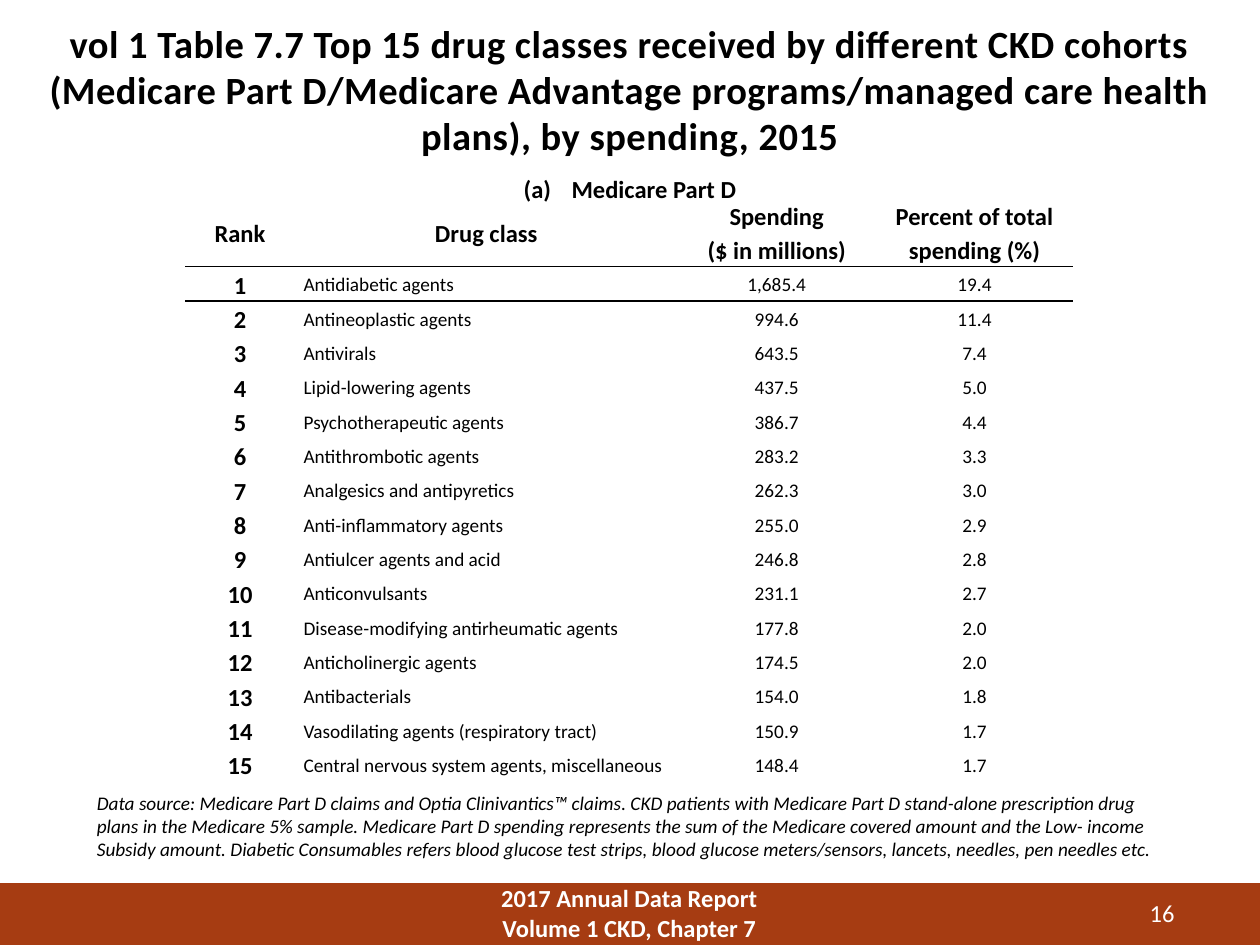
from dataclasses import dataclass

from lxml.etree import SubElement
from pptx import Presentation
from pptx.dml.color import RGBColor
from pptx.enum.shapes import MSO_SHAPE
from pptx.enum.text import MSO_ANCHOR, MSO_AUTO_SIZE, PP_ALIGN
from pptx.oxml import parse_xml
from pptx.oxml.ns import nsdecls, qn
from pptx.util import Inches, Pt

COLUMNS, ROWS = 100, 75  # slide grid, each unit a tenth of an inch
NO_TABLE_STYLE = "{2D5ABB26-0587-4C30-8999-92F81FD0307C}"


@dataclass(frozen=True)
class Theme:
    font: str = "Calibri"
    ink: str = "000000"
    paper: str = "FFFFFF"
    band: str = "A63C12"
    title: int = 22
    label: int = 14
    body: int = 11


class SlideBuilder:
    def __init__(self, deck, theme):
        self.theme = theme
        self.column = deck.slide_width / COLUMNS
        self.row = deck.slide_height / ROWS
        self.page = deck.slides.add_slide(deck.slide_layouts[6])

    def place(self, left, top, width, height):
        return (round(left * self.column), round(top * self.row),
                round(width * self.column), round(height * self.row))

    def style(self, para, size, color, align, bold=False, italic=False):
        para.alignment = align
        for span in para.runs:
            font = span.font
            font.name, font.size = self.theme.font, Pt(size)
            font.bold, font.italic = bold, italic
            font.color.rgb = RGBColor.from_string(color)

    def band(self, area, color):
        shape = self.page.shapes.add_shape(MSO_SHAPE.RECTANGLE, *self.place(*area))
        shape.shadow.inherit = False
        shape.fill.solid()
        shape.fill.fore_color.rgb = RGBColor.from_string(color)
        shape.line.fill.background()

    def text(self, area, words, size, color, align=PP_ALIGN.CENTER,
             wrap=True, grow=False, **emphasis):
        box = self.page.shapes.add_textbox(*self.place(*area))
        frame = box.text_frame
        frame.text = words
        frame.word_wrap = wrap
        frame.auto_size = MSO_AUTO_SIZE.SHAPE_TO_FIT_TEXT if grow else MSO_AUTO_SIZE.NONE
        for para in frame.paragraphs:
            self.style(para, size, color, align, **emphasis)
        return frame

    def letter_bullet(self, para, indent):
        properties = para._p.get_or_add_pPr()
        properties.set("marL", str(Inches(indent)))
        properties.set("indent", str(-Inches(indent)))
        SubElement(properties, qn("a:buFont"), typeface="+mj-lt")
        SubElement(properties, qn("a:buAutoNum"), type="alphaLcParenBoth")

    def rule(self, cell, side):
        line = parse_xml(
            f'<a:{side} {nsdecls("a")} w="{Pt(1)}"><a:solidFill>'
            f'<a:srgbClr val="{self.theme.ink}"/></a:solidFill></a:{side}>')
        cell._tc.get_or_add_tcPr().insert(0, line)

    def table(self, left, top, widths, header_height, row_height, records):
        heights = [header_height] + [row_height] * (len(records) - 1)
        area = self.place(left, top, sum(widths), sum(heights))
        table = self.page.shapes.add_table(len(records), len(widths), *area).table
        table.first_row = table.horz_banding = False
        table._tbl.tblPr.find(qn("a:tableStyleId")).text = NO_TABLE_STYLE
        for column, width in zip(table.columns, widths):
            column.width = round(width * self.column)
        for row, height in zip(table.rows, heights):
            row.height = round(height * self.row)
        for i, record in enumerate(records):
            for j, value in enumerate(record):
                self.cell(table.cell(i, j), value, i, j)

    def cell(self, cell, value, i, j):
        heading = i == 0 or j == 0
        cell.text = value
        cell.fill.background()
        cell.vertical_anchor = MSO_ANCHOR.MIDDLE
        cell.margin_left = cell.margin_right = Inches(0.07)
        cell.margin_top = cell.margin_bottom = 0
        para = cell.text_frame.paragraphs[0]
        para.line_spacing = 1.15
        self.style(para, self.theme.label if heading else self.theme.body, self.theme.ink,
                   PP_ALIGN.LEFT if j == 1 and i else PP_ALIGN.CENTER, bold=heading)
        if i < 2:  # the rule between the header and the first record
            self.rule(cell, "lnT" if i else "lnB")


HEADER = ("Rank", "Drug class", "Spending\v($ in millions)", "Percent of total spending (%)")
DRUG_CLASSES = [
    ("Antidiabetic agents", "1,685.4", "19.4"),
    ("Antineoplastic agents", "994.6", "11.4"),
    ("Antivirals", "643.5", "7.4"),
    ("Lipid-lowering agents", "437.5", "5.0"),
    ("Psychotherapeutic agents", "386.7", "4.4"),
    ("Antithrombotic agents", "283.2", "3.3"),
    ("Analgesics and antipyretics", "262.3", "3.0"),
    ("Anti-inflammatory agents", "255.0", "2.9"),
    ("Antiulcer agents and acid", "246.8", "2.8"),
    ("Anticonvulsants", "231.1", "2.7"),
    ("Disease-modifying antirheumatic agents", "177.8", "2.0"),
    ("Anticholinergic agents", "174.5", "2.0"),
    ("Antibacterials", "154.0", "1.8"),
    ("Vasodilating agents (respiratory tract)", "150.9", "1.7"),
    ("Central nervous system agents, miscellaneous", "148.4", "1.7"),
]
TITLE = ("vol 1 Table 7.7 Top 15 drug classes received by different CKD cohorts "
         "(Medicare Part D/Medicare Advantage programs/managed care health plans), "
         "by spending, 2015")
SOURCE_NOTE = (
    "Data source: Medicare Part D claims and Optia Clinivantics™ claims. CKD patients with "
    "Medicare Part D stand-alone prescription drug plans in the Medicare 5% sample. Medicare "
    "Part D spending represents the sum of the Medicare covered amount and the Low- income "
    "Subsidy amount. Diabetic Consumables refers blood glucose test strips, blood glucose "
    "meters/sensors, lancets, needles, pen needles etc.")


def main():
    deck = Presentation()
    deck.slide_width, deck.slide_height = Inches(10), Inches(7.5)
    theme = Theme()
    slide = SlideBuilder(deck, theme)

    # Footer
    slide.band((0, 70.1, COLUMNS, ROWS - 70.1), theme.band)
    slide.text((35.8, 69.6, 28.3, 5.4), "2017 Annual Data Report\nVolume 1 CKD, Chapter 7",
               theme.label, theme.paper, bold=True)
    slide.text((84.2, 70.8, 10, 3), "16", theme.label, theme.paper, PP_ALIGN.RIGHT)

    # Title
    title = slide.text((2.3, 1.1, 95.4, 10.7), TITLE, theme.title, theme.ink, bold=True)
    title.paragraphs[0].runs[0].font._element.set("spc", "30")

    # Spending table, ranked from the order of the records
    ranked = [(str(rank), *record) for rank, record in enumerate(DRUG_CLASSES, start=1)]
    slide.table(14.7, 15.7, (8.7, 30.4, 15.7, 15.7), 5.4, 2.7, [HEADER, *ranked])

    # Table caption
    caption = slide.text((40.5, 13.3, 19, 3.4), "Medicare Part D", theme.label, theme.ink,
                         wrap=False, grow=True, bold=True)
    caption.paragraphs[0].space_after = Pt(12)
    slide.letter_bullet(caption.paragraphs[0], 0.38)

    # Source note
    slide.text((6.7, 62.3, 86.7, 6.6), SOURCE_NOTE, theme.body, theme.ink, PP_ALIGN.LEFT,
               grow=True, italic=True)

    deck.save("out.pptx")


if __name__ == "__main__":
    main()
